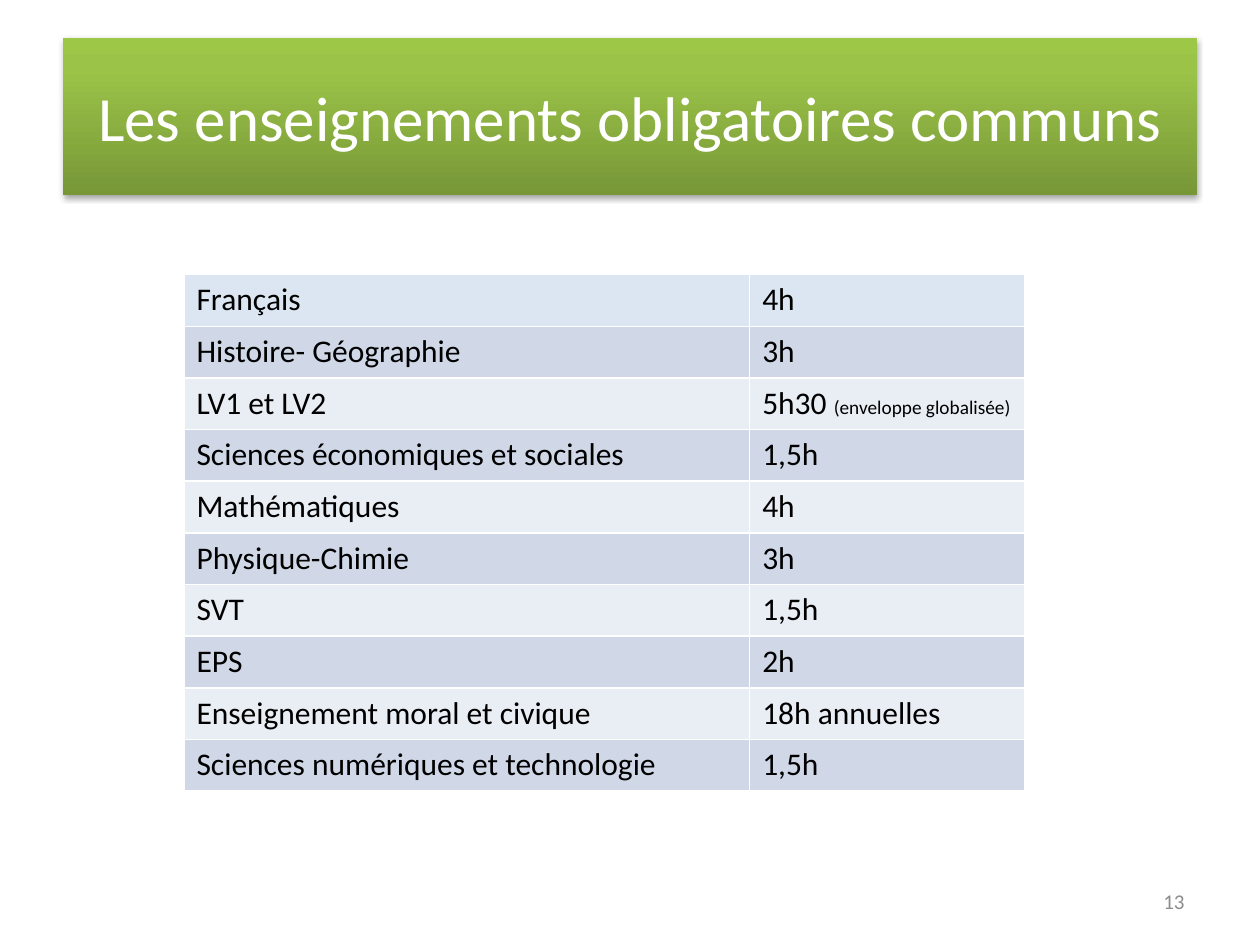
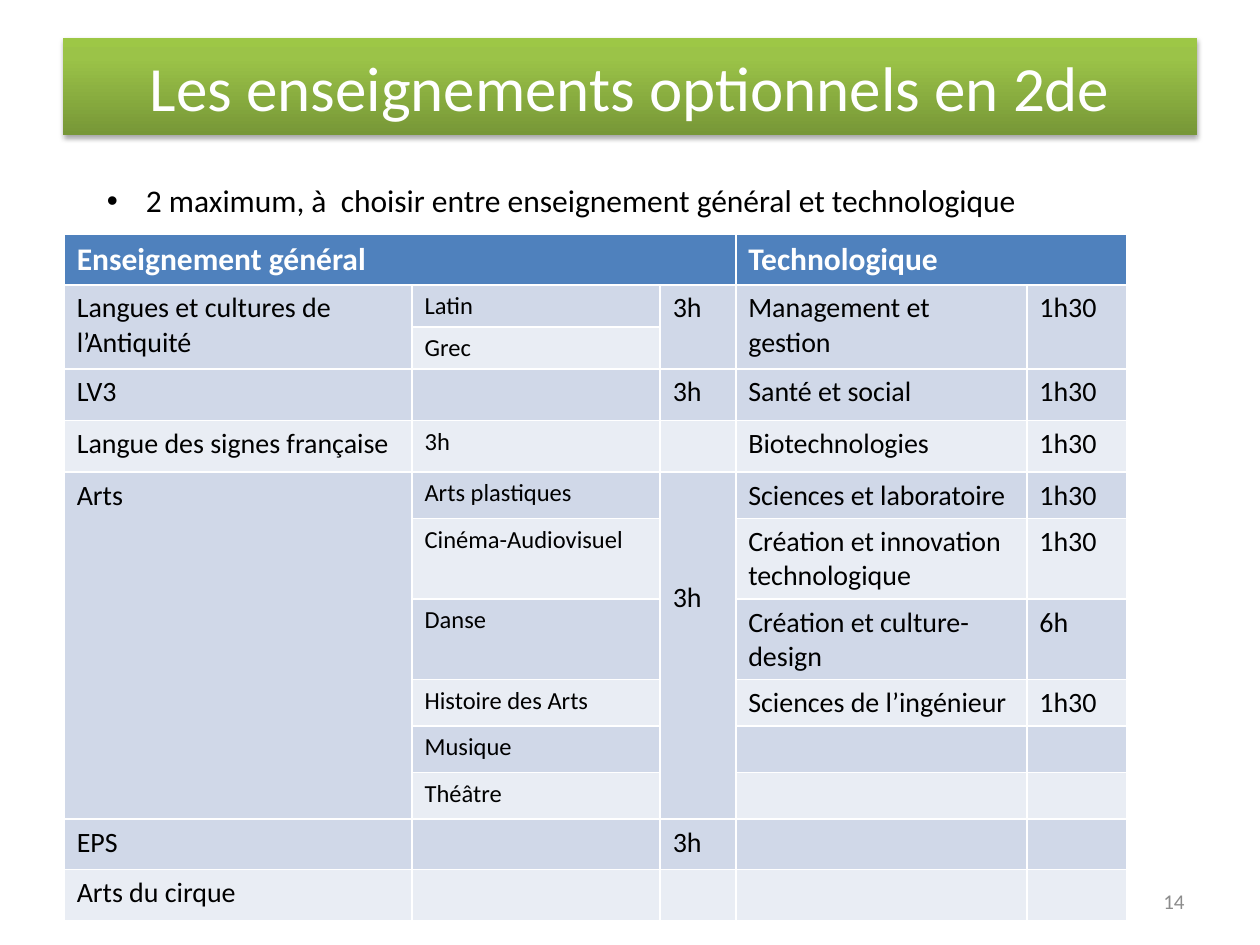
from lxml.etree import SubElement
from pptx import Presentation
from pptx.dml.color import RGBColor
from pptx.enum.text import MSO_ANCHOR, MSO_AUTO_SIZE, PP_ALIGN
from pptx.oxml import parse_xml
from pptx.oxml.ns import nsdecls, qn
from pptx.util import Inches, Pt

HUES = {
    "white": "FFFFFF", "black": "000000", "grey": "8C8C8C",
    "deep": "779737", "mid": "9BC348", "light": "9DC746",
    "blue": "4F81BD", "pale": "DCE6F2", "odd": "D0D8E8", "even": "E9EDF4",
}


def put(frame, text, size=18, hue="black", bold=False, align=None):
    para = frame.paragraphs[0]
    para.alignment = align
    if text:
        run = para.add_run()
        run.text = text
        run.font.name = "Calibri"
        run.font.size = Pt(size)
        run.font.bold = bold
        run.font.color.rgb = RGBColor.from_string(HUES[hue])
    else:
        SubElement(para._p, qn("a:endParaRPr"), sz=str(size * 100))
    return para


def grid(slide, rows, left, top, cols, highs, head, ink, sizes):
    table = slide.shapes.add_table(
        len(rows), len(cols), Inches(left), Inches(top),
        Inches(sum(cols)), Inches(sum(highs))).table
    for col, wide in zip(table.columns, cols):
        col.width = Inches(wide)
    for r, (row, high) in enumerate(zip(rows, highs)):
        table.rows[r].height = Inches(high)
        for c, text in enumerate(row):
            cell = table.cell(r, c)
            shade = head if r == 0 else "odd" if r % 2 else "even"
            cell.fill.solid()
            cell.fill.fore_color.rgb = RGBColor.from_string(HUES[shade])
            bold = r == 0 and ink == "white"
            put(cell.text_frame, text, size=18 if r == 0 else sizes[c],
                hue=ink if r == 0 else "black", bold=bold)
    return table


deck = Presentation()
deck.slide_width, deck.slide_height = Inches(10), Inches(7.5)

slides = []
for name, high, page in (
    ("Les enseignements obligatoires communs", 1.25, "13"),
    ("Les enseignements optionnels en 2de", 0.77, "14"),
):
    slide = deck.slides.add_slide(deck.slide_layouts[5])
    title = slide.shapes.title
    title.left, title.top = Inches(0.5), Inches(0.3)
    title.width, title.height = Inches(9), Inches(high)
    frame = title.text_frame
    frame.auto_size = MSO_AUTO_SIZE.NONE
    frame.vertical_anchor = MSO_ANCHOR.MIDDLE
    put(frame, name, size=36, hue="white", align=PP_ALIGN.CENTER)
    stops = "".join(
        f'<a:gs pos="{pos}000"><a:srgbClr val="{HUES[hue]}"/></a:gs>'
        for pos, hue in ((0, "deep"), (80, "mid"), (100, "light")))
    props = title._element.spPr
    props.append(parse_xml(
        f'<a:gradFill {nsdecls("a")} rotWithShape="1"><a:gsLst>{stops}</a:gsLst>'
        '<a:lin ang="16200000" scaled="0"/></a:gradFill>'))
    props.append(parse_xml(
        f'<a:effectLst {nsdecls("a")}><a:outerShdw blurRad="40000" dist="23000" '
        f'dir="5400000" rotWithShape="0"><a:srgbClr val="{HUES["black"]}">'
        '<a:alpha val="35000"/></a:srgbClr></a:outerShdw></a:effectLst>'))
    foot = slide.shapes.add_textbox(
        Inches(7.17), Inches(6.95), Inches(2.33), Inches(0.4)).text_frame
    foot.word_wrap = True
    foot.vertical_anchor = MSO_ANCHOR.MIDDLE
    put(foot, page, size=12, hue="grey", align=PP_ALIGN.RIGHT)
    slides.append(slide)

core = [
    ("Français", "4h"),
    ("Histoire- Géographie", "3h"),
    ("LV1 et LV2", "5h30 "),
    ("Sciences économiques et sociales", "1,5h"),
    ("Mathématiques", "4h"),
    ("Physique-Chimie", "3h"),
    ("SVT", "1,5h"),
    ("EPS", "2h"),
    ("Enseignement moral et civique", "18h annuelles"),
    ("Sciences numériques et technologie", "1,5h"),
]
table = grid(slides[0], core, 1.46, 2.18, (4.49, 2.18), [0.41] * len(core),
             "pale", "black", (18, 18))
put(table.cell(2, 1).text_frame, "(enveloppe globalisée)", size=11)

note = slides[1].shapes.add_textbox(
    Inches(0.75), Inches(1.39), Inches(8.43), Inches(0.4)).text_frame
note.word_wrap = True
para = put(note, "2 maximum, à  choisir entre enseignement général et technologique")
props = para._p.get_or_add_pPr()
props.set("marL", str(Inches(0.31)))
props.set("indent", str(-Inches(0.31)))
SubElement(props, qn("a:buFont"), typeface="Arial")
SubElement(props, qn("a:buChar"), char="•")

extra = [
    ("Enseignement général", "", "", "Technologique", ""),
    ("Langues et cultures de l’Antiquité", "Latin", "3h", "Management et gestion", "1h30"),
    ("", "Grec", "", "", ""),
    ("LV3", "", "3h", "Santé et social", "1h30"),
    ("Langue des signes française", "3h", "", "Biotechnologies", "1h30"),
    ("Arts", "Arts plastiques", "3h", "Sciences et laboratoire", "1h30"),
    ("", "Cinéma-Audiovisuel", "", "Création et innovation technologique", "1h30"),
    ("", "Danse", "", "Création et culture-design", "6h"),
    ("", "Histoire des Arts", "", "Sciences de l’ingénieur", "1h30"),
    ("", "Musique", "", "", ""),
    ("", "Théâtre", "", "", ""),
    ("EPS", "", "3h", "", ""),
    ("Arts du cirque", "", "", "", ""),
]
highs = (0.4, 0.33, 0.33, 0.41, 0.41, 0.36, 0.64, 0.64, 0.36, 0.37, 0.37, 0.4, 0.41)
table = grid(slides[1], extra, 0.51, 1.86, (2.76, 1.97, 0.6, 2.31, 0.79), highs,
             "blue", "white", (16, 14, 16, 16, 16))
for top, left, end, right in (
    (0, 0, 0, 2), (0, 3, 0, 4),
    (1, 0, 2, 0), (1, 2, 2, 2), (1, 3, 2, 3), (1, 4, 2, 4),
    (5, 0, 10, 0), (5, 2, 10, 2),
):
    table.cell(top, left).merge(table.cell(end, right))
table.cell(5, 2).margin_top = Inches(0.86)

deck.save("out.pptx")
